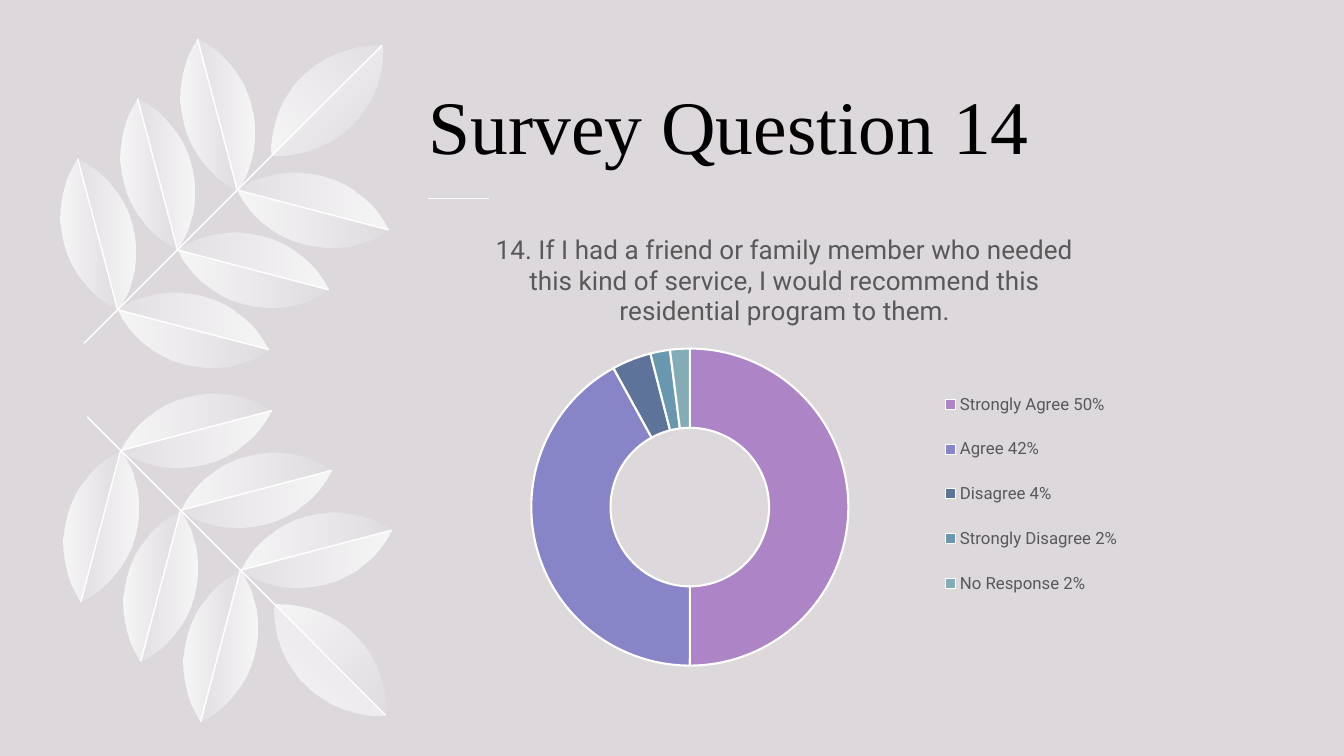
"""Builds the Survey Question 14 slide with two leafy branches and a doughnut chart."""
import math
from dataclasses import dataclass

import lxml.etree
import pptx
import pptx.chart.data
import pptx.dml.color
import pptx.enum.chart
import pptx.enum.shapes
import pptx.enum.text
import pptx.oxml
import pptx.oxml.ns
import pptx.util

EMU_PER_PX = 9525
CHART_WIDTH, CHART_HEIGHT = 741, 444
QUESTION = (
    "14. If I had a friend or family member who needed this kind of service, "
    "I would recommend this residential program to them."
)
Point = tuple[float, float]


@dataclass(frozen=True)
class Leaf:
    """A leaf given by its base and the two curves of its near edge."""
    base: Point
    edge: tuple[Point, ...]
    near_angle: int
    far_angle: int


@dataclass(frozen=True)
class Branch:
    """A placement of the shared branch, upright or mirrored."""
    shift_x: int
    shift_y: int
    sign: int
    rotation: int

    def place(self, point: Point) -> Point:
        """Return the position of a branch point on the page."""
        return point[0] + self.shift_x, self.sign * point[1] + self.shift_y


@dataclass(frozen=True)
class Answer:
    """One slice of the survey chart."""
    label: str
    percent: int
    color: str


SIDE_EDGE = ((0, 0), (23, -15), (52, -21), (81, -13), (109, -6), (132, 14), (144, 38))
UPRIGHT_EDGE = tuple((-y, -x) for x, y in SIDE_EDGE)
END_EDGE = ((0, 0), (-2, -26), (8, -55), (29, -76), (50, -96), (78, -106), (105, -105))
LEAVES = [
    Leaf((226 - 57 * node, 181 + 57 * node), edge, 180, 0)
    for node in range(3)
    for edge in (UPRIGHT_EDGE, SIDE_EDGE)
] + [Leaf((259, 148), END_EDGE, 315, 45)]
STEM = ((80, 327), (364, 43))
BRANCHES = [Branch(0, 0, 1, 45), Branch(3, 724, -1, 315)]
ANSWERS = [
    Answer("Strongly Agree 50%", 50, "AD84C6"),
    Answer("Agree 42%", 42, "8784C7"),
    Answer("Disagree 4%", 4, "5D739A"),
    Answer("Strongly Disagree 2%", 2, "6997AF"),
    Answer("No Response 2%", 2, "84ACB6"),
]


def px(value: float) -> int:
    """Turn px into EMU."""
    return round(value * EMU_PER_PX)


def rgb(color: str) -> pptx.dml.color.RGBColor:
    """Turn a hex string into a colour."""
    return pptx.dml.color.RGBColor.from_string(color)


def style_font(font, size: float, color: str, name: str) -> None:
    """Set size, colour and typeface of a font."""
    font.size = pptx.util.Pt(size)
    font.bold = False
    font.name = name
    font.color.rgb = rgb(color)


def rotate(point: Point, degrees: float) -> Point:
    """Rotate a point clockwise around the page corner."""
    angle = math.radians(degrees)
    x, y = point
    return (x * math.cos(angle) - y * math.sin(angle),
            x * math.sin(angle) + y * math.cos(angle))


def curve_outline(shape) -> None:
    """Turn each three straight segments of an outline into one cubic curve."""
    segments = list(shape.element.spPr.iter(pptx.oxml.ns.qn("a:lnTo")))
    for first in range(0, len(segments), 3):
        curve = lxml.etree.Element(pptx.oxml.ns.qn("a:cubicBezTo"))
        segments[first].addprevious(curve)
        for segment in segments[first:first + 3]:
            curve.append(segment[0])
            segment.getparent().remove(segment)


def fade_white(shape, angle: int, end_opacity: int) -> None:
    """Fill a shape with white that fades along a page angle."""
    stops = "".join(
        f'<a:gs pos="{position}"><a:srgbClr val="FFFFFF"><a:alpha val="{opacity * 1000}"/>'
        "</a:srgbClr></a:gs>"
        for position, opacity in ((0, 80), (100000, end_opacity))
    )
    gradient = pptx.oxml.parse_xml(
        f'<a:gradFill {pptx.oxml.ns.nsdecls("a")} rotWithShape="0"><a:gsLst>{stops}</a:gsLst>'
        f'<a:lin ang="{angle * 60000}" scaled="0"/></a:gradFill>'
    )
    shape.fill.background()
    blank = shape.element.spPr.find(pptx.oxml.ns.qn("a:noFill"))
    blank.getparent().replace(blank, gradient)


def draw_half_leaf(page, outline: list[Point], rotation: int, angle: int, opacity: int) -> None:
    """Draw one half of a leaf as a rotated outline."""
    points = [rotate((px(x), px(y)), -rotation) for x, y in outline]
    builder = page.shapes.build_freeform(*points[0], scale=1.0)
    builder.add_line_segments(points[1:], close=True)
    half = builder.convert_to_shape()
    curve_outline(half)
    center = rotate((half.left + half.width / 2, half.top + half.height / 2), rotation)
    half.left = round(center[0] - half.width / 2)
    half.top = round(center[1] - half.height / 2)
    half.rotation = rotation
    half.shadow.inherit = False
    fade_white(half, angle, opacity)
    half.line.fill.background()


def draw_line(page, start: Point, end: Point) -> None:
    """Draw a thin white line."""
    line = page.shapes.add_connector(
        pptx.enum.shapes.MSO_CONNECTOR.STRAIGHT, px(start[0]), px(start[1]), px(end[0]), px(end[1]))
    line.line.color.rgb = rgb("FFFFFF")
    line.line.width = pptx.util.Pt(1)
    lxml.etree.SubElement(line.element.spPr, pptx.oxml.ns.qn("a:effectLst"))


def draw_branch(page, branch: Branch) -> None:
    """Draw the leaves, veins and stem of a branch."""
    for leaf in LEAVES:
        tip = leaf.edge[-1]
        opposite = [(tip[0] - x, tip[1] - y) for x, y in leaf.edge]
        halves = ((opposite, leaf.far_angle, 10), (leaf.edge, leaf.near_angle, 20))
        for edge, angle, opacity in halves:
            outline = [branch.place((leaf.base[0] + x, leaf.base[1] + y)) for x, y in edge]
            draw_half_leaf(page, outline, branch.rotation, angle, opacity)
        if leaf.edge != END_EDGE:
            tip_point = (leaf.base[0] + tip[0], leaf.base[1] + tip[1])
            draw_line(page, branch.place(leaf.base), branch.place(tip_point))
    draw_line(page, branch.place(STEM[0]), branch.place(STEM[1]))


def draw_title(page) -> None:
    """Write the slide title."""
    box = page.shapes.add_textbox(px(408), px(41), px(812), px(125))
    frame = box.text_frame
    frame.word_wrap = True
    frame.vertical_anchor = pptx.enum.text.MSO_ANCHOR.BOTTOM
    frame.margin_left = 0
    span = frame.paragraphs[0].add_run()
    span.text = "Survey Question 14"
    style_font(span.font, 54, "000000", "Times New Roman")


def set_layout(part, x: int, y: int, w: int, h: int, inner: bool = False) -> None:
    """Place a chart part by px inside the chart."""
    for old in part.findall(pptx.oxml.ns.qn("c:layout")):
        part.remove(old)
    target = '<c:layoutTarget val="inner"/>' if inner else ""
    shares = (x / CHART_WIDTH, y / CHART_HEIGHT, w / CHART_WIDTH, h / CHART_HEIGHT)
    sizes = "".join(f'<c:{name} val="{share:.4f}"/>' for name, share in zip("xywh", shares))
    layout = pptx.oxml.parse_xml(
        f'<c:layout {pptx.oxml.ns.nsdecls("c")}><c:manualLayout>{target}'
        f'<c:xMode val="edge"/><c:yMode val="edge"/>{sizes}</c:manualLayout></c:layout>')
    part.insert(0 if inner else 1, layout)


def draw_chart(page) -> None:
    """Draw the doughnut chart of the answers."""
    data = pptx.chart.data.CategoryChartData()
    data.categories = [answer.label for answer in ANSWERS]
    data.add_series(QUESTION, [answer.percent for answer in ANSWERS])
    chart = page.shapes.add_chart(
        pptx.enum.chart.XL_CHART_TYPE.DOUGHNUT,
        px(377), px(203), px(CHART_WIDTH), px(CHART_HEIGHT), data).chart
    style_font(chart.font, 10, "000000", "Roboto")
    span = chart.chart_title.text_frame.paragraphs[0].add_run()
    span.text = QUESTION
    style_font(span.font, 18.6, "595959", "Roboto")
    chart.chart_title.include_in_layout = False
    chart.has_legend = True
    chart.legend.position = pptx.enum.chart.XL_LEGEND_POSITION.RIGHT
    chart.legend.include_in_layout = False
    style_font(chart.legend.font, 12, "595959", "Roboto")
    plot = chart.plots[0]
    plot.vary_by_categories = True
    for index, answer in enumerate(ANSWERS):
        style = plot.series[0].points[index].format
        style.fill.solid()
        style.fill.fore_color.rgb = rgb(answer.color)
        style.line.color.rgb = rgb("FFFFFF")
        style.line.width = pptx.util.Pt(1.5)
    root = chart.element
    root.find(".//" + pptx.oxml.ns.qn("c:holeSize")).set("val", "75")
    set_layout(root.find(".//" + pptx.oxml.ns.qn("c:plotArea")), 129, 129, 302, 302, True)
    set_layout(root.find(".//" + pptx.oxml.ns.qn("c:legend")), 509, 149, 193, 237)


def main() -> None:
    """Build and save the deck."""
    deck = pptx.Presentation()
    deck.slide_width, deck.slide_height = px(1280), px(720)
    page = deck.slides.add_slide(deck.slide_layouts[6])
    page.background.fill.solid()
    page.background.fill.fore_color.rgb = rgb("DCD8DC")
    draw_line(page, (408, 189), (466, 189))
    for branch in BRANCHES:
        draw_branch(page, branch)
    draw_title(page)
    draw_chart(page)
    deck.save("out.pptx")


if __name__ == "__main__":
    main()
